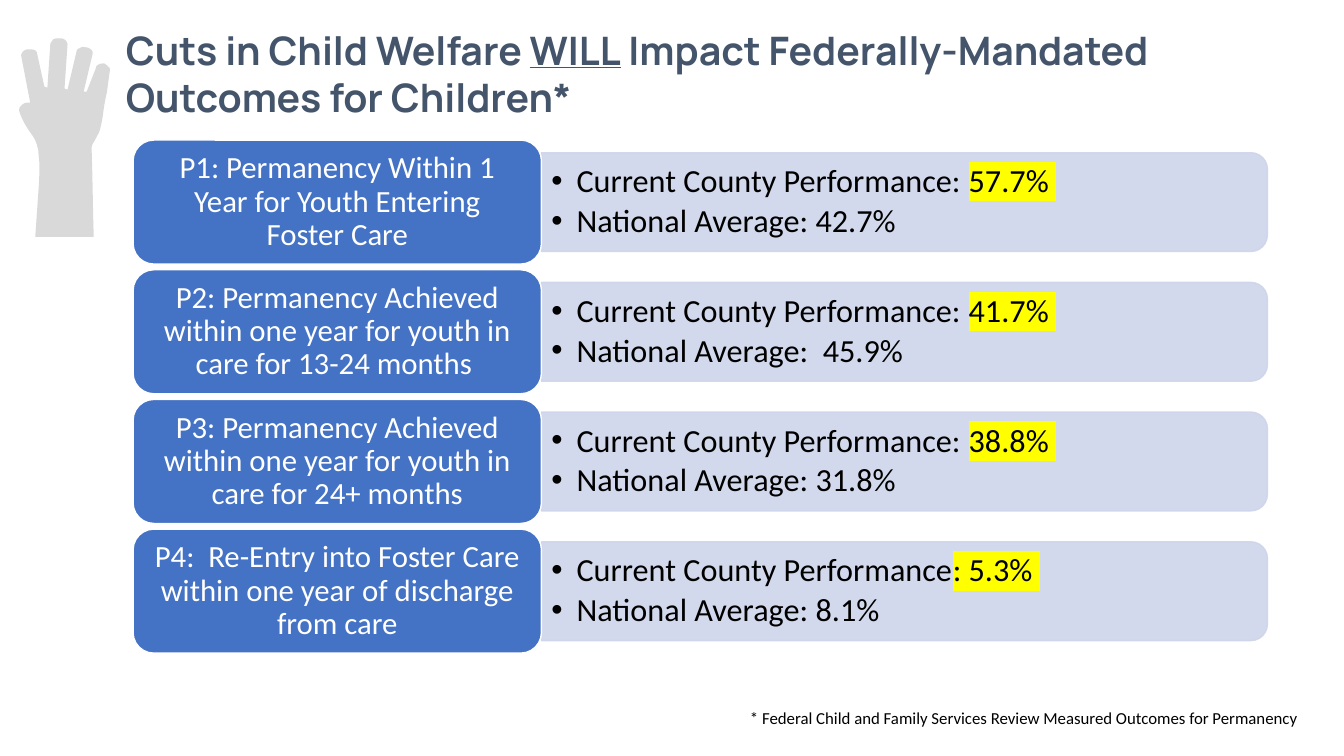
from lxml import etree
from pptx import Presentation
from pptx import util as u
from pptx.dml.color import RGBColor
from pptx.enum import shapes, text
from pptx.oxml import ns

SLATE = RGBColor(0x44, 0x54, 0x6A)
BLUE = RGBColor(0x44, 0x72, 0xC4)
PALE = RGBColor(0xCF, 0xD5, 0xEA)
GREY = RGBColor(0xD9, 0xD9, 0xD9)
WHITE = RGBColor(0xFF, 0xFF, 0xFF)
BLACK = RGBColor(0, 0, 0)
YELLOW = RGBColor(0xFF, 0xFF, 0)

TITLE = {"size": u.Pt(28), "name": "Manrope", "bold": True}
LABEL = {"size": u.Pt(22), "name": "Calibri"}
FIGURE = {"size": u.Pt(23), "name": "Calibri"}
NOTE = {"size": u.Pt(12), "name": "Calibri"}
GROWING = {"word_wrap": True, "auto_size": text.MSO_AUTO_SIZE.SHAPE_TO_FIT_TEXT}
MIDDLE = {"word_wrap": True, "vertical_anchor": text.MSO_ANCHOR.MIDDLE}


def apply(target, values):
    for name, value in values.items():
        setattr(target, name, value)


def add_span(para, words, style, color, highlight=None):
    span = para.add_run()
    span.text = words
    apply(span.font, style)
    span.font.color.rgb = color
    if highlight is not None:
        mark = etree.Element(ns.qn("a:highlight"))
        etree.SubElement(mark, ns.qn("a:srgbClr"), val=str(highlight))
        span.font._element.find(ns.qn("a:solidFill")).addnext(mark)
    return span


deck = Presentation()
deck.slide_width, deck.slide_height = u.Inches(13.33), u.Inches(7.5)
page = deck.slides.add_slide(deck.slide_layouts[6])

# Hundredths of an inch: two values end a line, six values bend a curve.
hand_start = (59, 38)
hand_steps = [
    (57, 38, 55, 38, 53, 39), (52, 40, 51, 42, 50, 43), (47, 87), (44, 86), (37, 54),
    (37, 52, 36, 51, 35, 50), (33, 49, 31, 49, 29, 49), (28, 49),
    (26, 49, 24, 50, 23, 51), (22, 52, 21, 54, 21, 55), (30, 102),
    (26, 101, 22, 103, 20, 106), (19, 107, 19, 109, 19, 110),
    (21, 117, 25, 124, 29, 130), (32, 134, 35, 138, 36, 142),
    (37, 144, 37, 145, 37, 146), (38, 147, 38, 149, 38, 150),
    (40, 164, 39, 178, 38, 192), (37, 206, 36, 221, 35, 235), (93, 235),
    (92, 206, 92, 178, 91, 150), (91, 148, 91, 147, 91, 146),
    (91, 144, 92, 143, 93, 141), (95, 138, 96, 135, 98, 132),
    (100, 127, 101, 121, 102, 115), (103, 107, 104, 100, 106, 92),
    (107, 85, 108, 77, 109, 70), (109, 68, 109, 67, 107, 66),
    (107, 65, 105, 64, 103, 63), (104, 63), (102, 63, 99, 63, 98, 64),
    (96, 65, 95, 66, 95, 68), (86, 91), (83, 91), (92, 53),
    (92, 52, 92, 50, 90, 49), (89, 48, 87, 47, 85, 47),
    (82, 46, 80, 47, 79, 48), (77, 48, 76, 50, 76, 51), (67, 89), (64, 88), (67, 44),
    (67, 43, 66, 41, 65, 40), (64, 39, 62, 38, 60, 38),
]
unit = u.Inches(0.01)
hand_points = [hand_start]
for step in hand_steps:
    if len(step) == 2:
        hand_points.append(step)
        continue
    corners = [hand_points[-1], step[:2], step[2:4], step[4:]]
    for t in (0.25, 0.5, 0.75, 1):
        weights = ((1 - t) ** 3, 3 * t * (1 - t) ** 2, 3 * t**2 * (1 - t), t**3)
        hand_points.append(tuple(sum(w * c[axis] for w, c in zip(weights, corners)) for axis in (0, 1)))
outline = page.shapes.build_freeform(hand_start[0] * unit, hand_start[1] * unit)
outline.add_line_segments([(x * unit, y * unit) for x, y in hand_points[1:]])
hand = outline.convert_to_shape()
hand.shadow.inherit = False
hand.fill.solid()
hand.fill.fore_color.rgb = GREY
hand.line.fill.background()

title = page.shapes.add_textbox(u.Inches(1.15), u.Inches(0.21), u.Inches(11.99), u.Inches(1.04))
apply(title.text_frame, GROWING)
para = title.text_frame.paragraphs[0]
add_span(para, "Cuts in Child Welfare ", TITLE, SLATE)
add_span(para, "WILL", {**TITLE, "underline": True}, SLATE)
add_span(para, " Impact Federally-Mandated Outcomes for Children*", TITLE, SLATE)

measures = [
    ("P1: Permanency Within 1 Year for Youth Entering Foster Care",
     "Current County Performance: ", "57.7% ", "National Average: 42.7%"),
    ("P2: Permanency Achieved within one year for youth in care for 13-24 months ",
     "Current County Performance: ", "41.7% ", "National Average:  45.9%"),
    ("P3: Permanency Achieved within one year for youth in care for 24+ months",
     "Current County Performance: ", "38.8% ", "National Average: 31.8%"),
    ("P4:  Re-Entry into Foster Care within one year of discharge from care",
     "Current County Performance", ": 5.3% ", "National Average: 8.1%"),
]
left, top, pitch = u.Inches(1.32), u.Inches(1.39), u.Inches(3.86) / 3
card_width, card_height = u.Inches(4.05), u.Inches(1.23)
panel_length, panel_depth = u.Inches(7.2), u.Inches(0.98)
panel_left = left + card_width
figures_height = u.Inches(0.88)

for row, (label, lead, value, average) in enumerate(measures):
    card_top = int(top + row * pitch)
    middle = card_top + card_height // 2

    panel = page.shapes.add_shape(
        shapes.MSO_SHAPE.ROUND_2_SAME_RECTANGLE,
        panel_left + (panel_length - panel_depth) // 2, middle - panel_length // 2,
        panel_depth, panel_length)
    panel.rotation = 90
    card = page.shapes.add_shape(
        shapes.MSO_SHAPE.ROUNDED_RECTANGLE, left, card_top, card_width, card_height)
    for box, fill, edge in ((panel, PALE, PALE), (card, BLUE, WHITE)):
        box.shadow.inherit = False
        box.fill.solid()
        box.fill.fore_color.rgb = fill
        box.line.color.rgb = edge
        box.line.width = u.Pt(1)
    for color in panel._element.spPr.iter(ns.qn("a:srgbClr")):
        etree.SubElement(color, ns.qn("a:alpha"), val="90000")

    apply(card.text_frame, {**MIDDLE, "margin_left": u.Inches(0.15), "margin_right": u.Inches(0.15)})
    para = card.text_frame.paragraphs[0]
    apply(para, {"alignment": text.PP_ALIGN.CENTER, "line_spacing": 0.9})
    add_span(para, label, LABEL, WHITE)

    figures = page.shapes.add_textbox(
        panel_left, middle - figures_height // 2, u.Inches(7.15), figures_height)
    apply(figures.text_frame, MIDDLE)
    current = figures.text_frame.paragraphs[0]
    national = figures.text_frame.add_paragraph()
    add_span(current, lead, FIGURE, BLACK)
    add_span(current, value, FIGURE, BLACK, YELLOW)
    add_span(national, average, FIGURE, BLACK)
    for para in (current, national):
        apply(para, {"level": 1, "line_spacing": 0.9, "space_after": u.Pt(3.45)})
        props = para._p.get_or_add_pPr()
        props.set("marL", str(u.Inches(0.25)))
        props.set("indent", str(-u.Inches(0.25)))
        etree.SubElement(props, ns.qn("a:buFont"), typeface="Arial")
        etree.SubElement(props, ns.qn("a:buChar"), char="•")

note = page.shapes.add_textbox(u.Inches(7.34), u.Inches(6.97), u.Inches(5.8), u.Inches(0.3))
apply(note.text_frame, GROWING)
add_span(note.text_frame.paragraphs[0],
         "* Federal Child and Family Services Review Measured Outcomes for Permanency", NOTE, BLACK)

deck.save("out.pptx")
